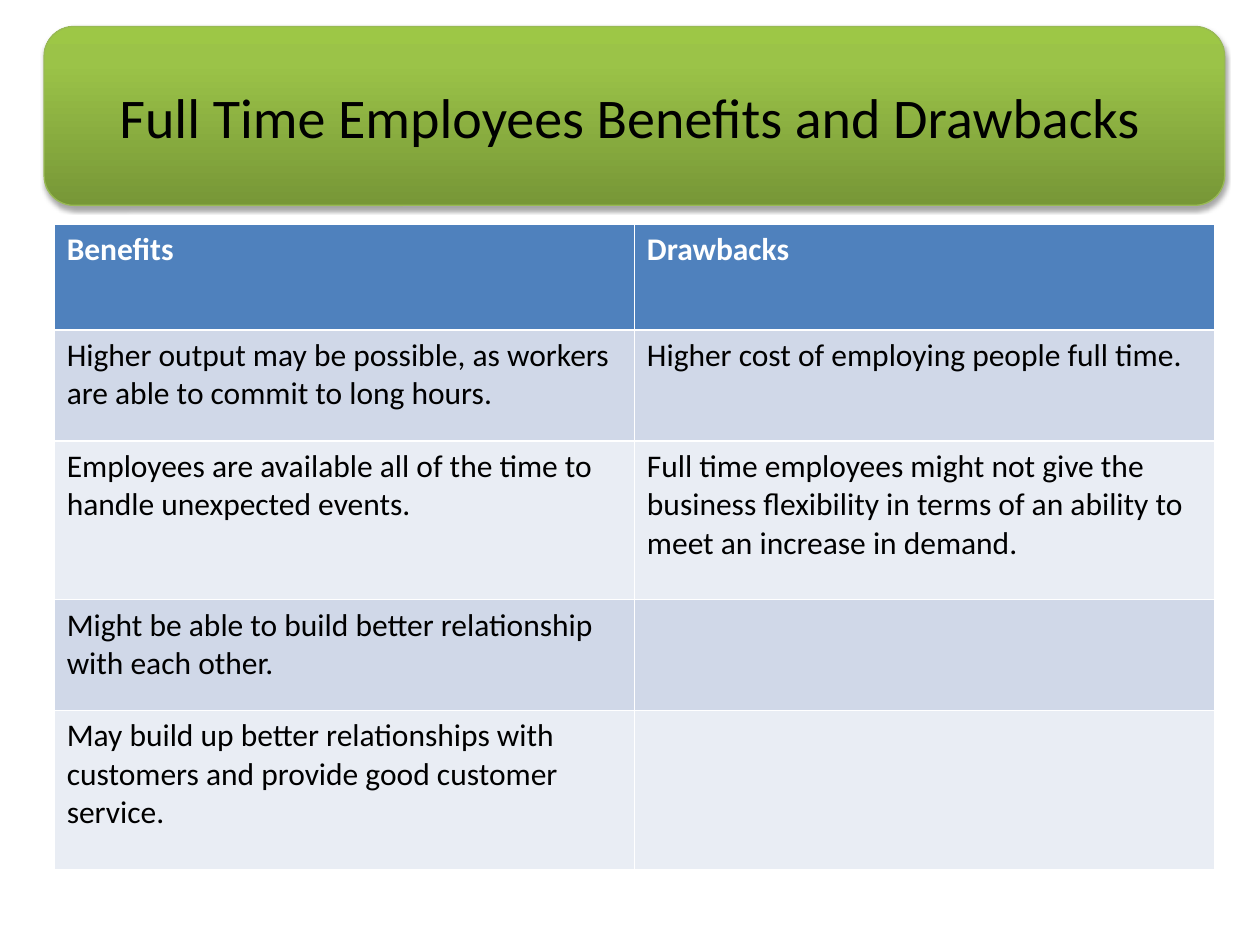
from dataclasses import dataclass

from lxml import etree
from pptx import Presentation
from pptx import util as u
from pptx.dml import color
from pptx.enum import shapes, text
from pptx.oxml import ns, parse_xml


@dataclass(frozen=True)
class Theme:
    font: str = "Calibri"
    title_size: int = 32
    body_size: int = 18
    ink: str = "000000"
    header_ink: str = "FFFFFF"
    header_fill: str = "4F81BD"
    bands: tuple = ("D0D8E8", "E9EDF4")
    banner_stops: tuple = ((0, "779737"), (80, "9BC348"), (100, "9DC746"))
    banner_line: str = "98B955"


class SlideBuilder:
    """Draws styled elements on one slide, placed by shares of its size."""

    def __init__(self, presentation, theme):
        self.width = presentation.slide_width
        self.height = presentation.slide_height
        self.slide = presentation.slides.add_slide(presentation.slide_layouts[6])
        self.theme = theme

    def box(self, left, top, width, height):
        return (round(left * self.width), round(top * self.height),
                round(width * self.width), round(height * self.height))

    def style(self, paragraph, size, ink, bold=False):
        font = paragraph.font
        font.name, font.size, font.bold = self.theme.font, u.Pt(size), bold
        font.color.rgb = color.RGBColor.from_string(ink)

    def banner(self, *place):
        shape = self.slide.shapes.add_shape(
            shapes.MSO_SHAPE.ROUNDED_RECTANGLE, *self.box(*place))
        shape.line.color.rgb = color.RGBColor.from_string(self.theme.banner_line)
        shape.line.width = u.Pt(0.75)
        shape.fill.gradient()
        shape.fill.gradient_angle = 90
        properties = shape._element.spPr
        stops = properties.find(".//" + ns.qn("a:gsLst"))
        stops.clear()
        for position, rgb in self.theme.banner_stops:
            stop = etree.SubElement(stops, ns.qn("a:gs"), pos=str(position * 1000))
            etree.SubElement(stop, ns.qn("a:srgbClr"), val=rgb)
        shape.shadow.inherit = False
        properties.find(ns.qn("a:effectLst")).append(parse_xml(
            f'<a:outerShdw {ns.nsdecls("a")} blurRad="{u.Pt(3.1)}" '
            f'dist="{u.Pt(1.8)}" dir="5400000" rotWithShape="0">'
            '<a:srgbClr val="000000"><a:alpha val="35000"/></a:srgbClr>'
            '</a:outerShdw>'))

    def title(self, wording, *place):
        frame = self.slide.shapes.add_textbox(*self.box(*place)).text_frame
        frame.word_wrap = True
        frame.vertical_anchor = text.MSO_ANCHOR.MIDDLE
        paragraph = frame.paragraphs[0]
        paragraph.text = wording
        paragraph.alignment = text.PP_ALIGN.CENTER
        self.style(paragraph, self.theme.title_size, self.theme.ink)

    def table(self, rows, row_heights, left, top, width):
        place = self.box(left, top, width, sum(row_heights))
        table = self.slide.shapes.add_table(len(rows), len(rows[0]), *place).table
        for index, (wordings, height) in enumerate(zip(rows, row_heights)):
            table.rows[index].height = round(height * self.height)
            header = index == 0
            fill = self.theme.header_fill if header else self.theme.bands[(index - 1) % 2]
            ink = self.theme.header_ink if header else self.theme.ink
            for cell, wording in zip(table.rows[index].cells, wordings):
                cell.text = wording
                cell.fill.solid()
                cell.fill.fore_color.rgb = color.RGBColor.from_string(fill)
                self.style(cell.text_frame.paragraphs[0], self.theme.body_size, ink, header)


ROWS = [
    ("Benefits", "Drawbacks"),
    ("Higher output may be possible, as workers are able to commit to long hours.",
     "Higher cost of employing people full time."),
    ("Employees are available all of the time to handle unexpected events.",
     "Full time employees might not give the business flexibility in terms of "
     "an ability to meet an increase in demand."),
    ("Might be able to build better relationship with each other.", ""),
    ("May build up better relationships with customers and provide good "
     "customer service.", ""),
]


def main():
    presentation = Presentation()
    presentation.slide_width, presentation.slide_height = u.Inches(10), u.Inches(7.5)
    builder = SlideBuilder(presentation, Theme())
    builder.banner(0.035, 0.21 / 7.5, 0.937, 1.42 / 7.5)
    builder.title("Full Time Employees Benefits and Drawbacks", 0.05, 0.04, 0.9, 1.25 / 7.5)
    row_heights = [inches / 7.5 for inches in (0.84, 0.88, 1.26, 0.88, 1.26)]
    builder.table(ROWS, row_heights, 0.043, 1.78 / 7.5, 0.921)
    presentation.save("out.pptx")


if __name__ == "__main__":
    main()
